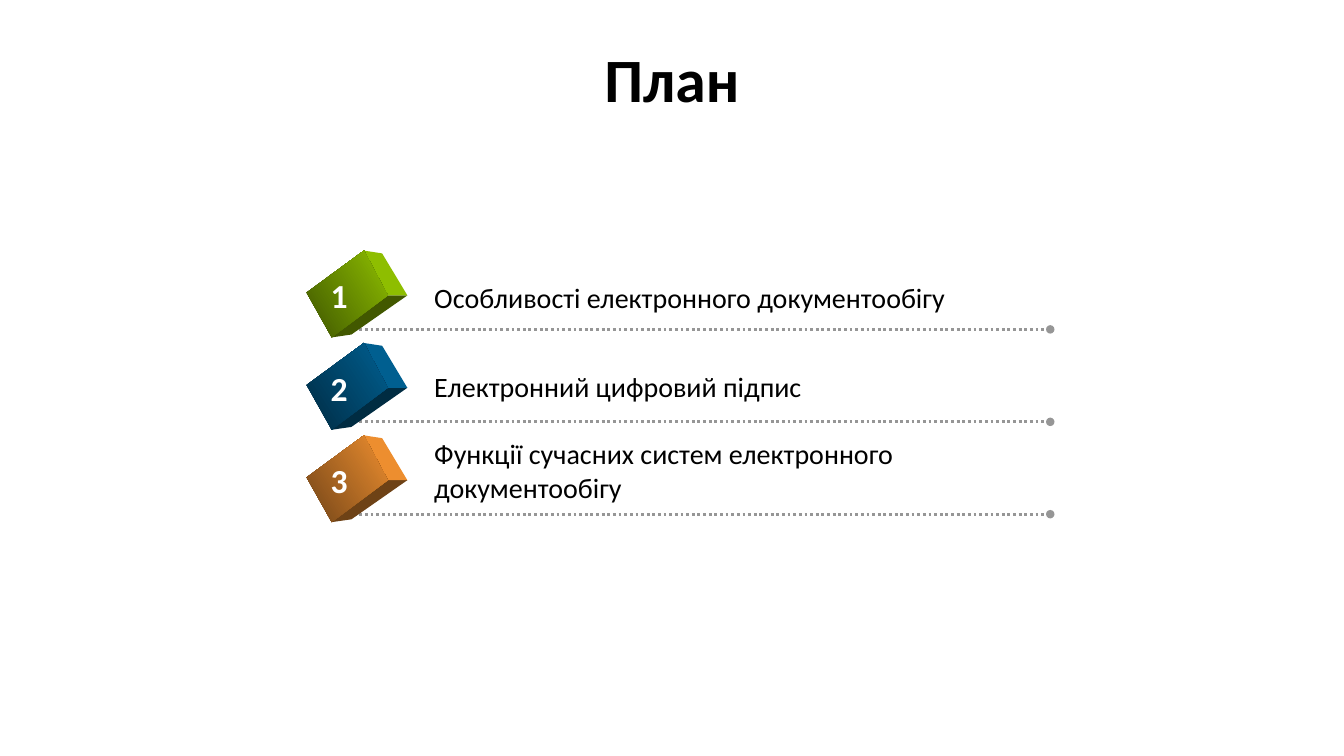
from pptx import Presentation
from pptx.dml.color import RGBColor
from pptx.enum.dml import MSO_LINE
from pptx.enum.shapes import MSO_CONNECTOR
from pptx.enum.text import MSO_ANCHOR, PP_ALIGN
from pptx.oxml.ns import qn
from pptx.util import Pt
from lxml import etree

DOTS = MSO_LINE.ROUND_DOT
STRAIGHT = MSO_CONNECTOR.STRAIGHT
MIDDLE = MSO_ANCHOR.MIDDLE
CENTER = PP_ALIGN.CENTER

# Content: label, label top, label height, dark end, light end, under side
TITLE = "План"
ITEMS = [
    ("Особливості електронного документообігу", 196.6, 31.7,
     "3F5600", "8EBE00", "425800"),
    ("Електронний цифровий підпис", 260.6, 31.7,
     "002C44", "005F90", "002C42"),
    ("Функції сучасних систем електронного документообігу", 308.2, 55.4,
     "734518", "ED8E2F", "6E4216"),
]

# Block corners, measured from the top left of a row
ROW_TOP, PITCH, LEFT = 179.3, 66, 218.6
FACE = [(0, 30), (41, 0), (58.5, 31.5), (18.5, 61.4)]
SIDE = [(41, 0), (54.3, 1.4), (72.8, 32.1), (58.5, 31.5)]
UNDER = [(18.5, 61.4), (58.5, 31.5), (72.8, 32.1), (32.8, 60)]


def color(code):
    return RGBColor.from_string(code)


def style(par, size, code, bold=False):
    par.font.name = "Calibri"
    par.font.size = Pt(size)
    par.font.bold = bold
    par.font.color.rgb = color(code)


def add_text(text, x, y, w, h, size, code, bold=False, wrap=True):
    frame = slide.shapes.add_textbox(Pt(x), Pt(y), Pt(w), Pt(h)).text_frame
    frame.word_wrap = wrap
    par = frame.paragraphs[0]
    par.text = text
    style(par, size, code, bold)


def add_line(y):
    line = slide.shapes.add_connector(
        STRAIGHT, Pt(252.7), Pt(y), Pt(750.2), Pt(y))
    line.line.color.rgb = color("969696")
    line.line.width = Pt(2)
    line.line.dash_style = DOTS
    etree.SubElement(line.line._get_or_add_ln(), qn("a:tailEnd"), type="oval")
    etree.SubElement(line._element.spPr, qn("a:effectLst"))


def add_face(points, top, dark, light):
    spots = [(LEFT + x, top + y) for x, y in points]
    pen = slide.shapes.build_freeform(*spots[0], scale=Pt(1))
    pen.add_line_segments(spots[1:], close=True)
    face = pen.convert_to_shape()
    face.shadow.inherit = False
    face.line.fill.background()
    if dark == light:
        face.fill.solid()
        face.fill.fore_color.rgb = color(dark)
        return
    face.fill.gradient()
    face.fill.gradient_angle = 33
    for stop, code in zip(face.fill.gradient_stops, (dark, light)):
        stop.color.rgb = color(code)


deck = Presentation()
deck.slide_width, deck.slide_height = Pt(960), Pt(540)
slide = deck.slides.add_slide(deck.slide_layouts[5])

# Title
title = slide.shapes.title
title.left, title.top, title.width, title.height = (
    Pt(66), Pt(28.8), Pt(828), Pt(59.8))
title.text_frame.text = TITLE
title.text_frame.vertical_anchor = MIDDLE
head = title.text_frame.paragraphs[0]
head.alignment = CENTER
head.line_spacing = 0.9
style(head, 44, "000000", True)

# Rows: dotted line, block, number, label
for i, (label, y, h, dark, light, under) in enumerate(ITEMS):
    top = ROW_TOP + i * PITCH
    add_line(top + 56)
    add_face(UNDER, top, under, under)
    add_face(SIDE, top, light, light)
    add_face(FACE, top, dark, light)
    add_text(str(i + 1), 229, top + 13.8, 36.7, 36, 24, "FFFFFF", True, False)
    add_text(label, 303.1, y, 465, h, 20, "000000")

deck.save("out.pptx")
